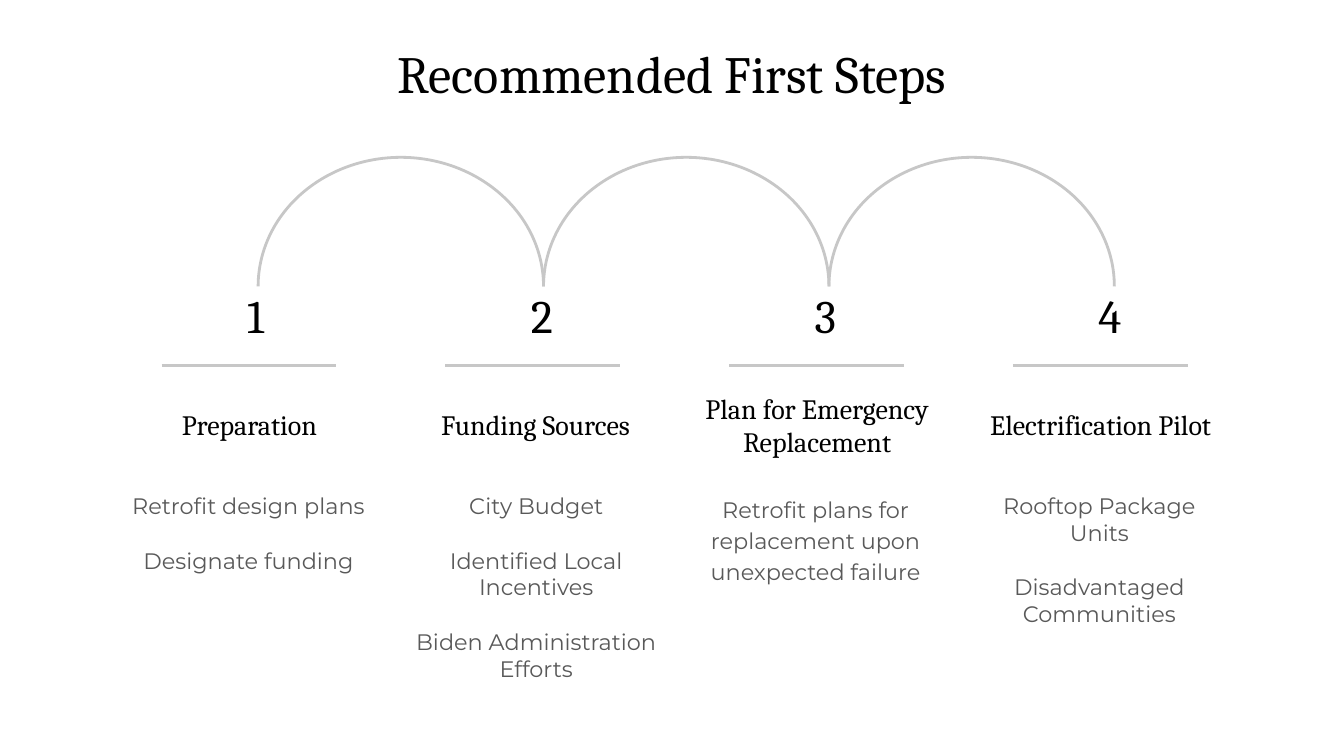
from dataclasses import dataclass

from lxml import etree
from pptx import Presentation
from pptx.dml.color import RGBColor
from pptx.enum import text
from pptx.oxml import ns
from pptx.util import Pt


@dataclass(frozen=True)
class Theme:
    ink: RGBColor = RGBColor(0, 0, 0)
    muted: RGBColor = RGBColor(0x59, 0x59, 0x59)
    rule: RGBColor = RGBColor(0xC7, 0xC7, 0xC7)
    serif: str = "Cambria"
    sans: str = "Montserrat"
    title: float = 28
    number: float = 25
    heading: float = 15
    body: float = 12
    stroke: float = 1.5
    inset: float = 7.2
    gap: float = 15


theme = Theme()


def write(box, lines, font, size, color, anchor=text.MSO_ANCHOR.TOP):
    """Fill a box with centred paragraphs in one style."""
    frame = box.text_frame
    frame.text = "\n".join(lines)
    frame.word_wrap = True
    frame.auto_size = text.MSO_AUTO_SIZE.NONE
    frame.vertical_anchor = anchor
    frame.margin_left = frame.margin_right = Pt(theme.inset)
    frame.margin_top = frame.margin_bottom = Pt(theme.inset)
    for index, paragraph in enumerate(frame.paragraphs):
        paragraph.alignment = text.PP_ALIGN.CENTER
        paragraph.space_before = Pt(theme.gap if index else 0)
        for run in paragraph.runs:
            run.font.name = font
            run.font.size = Pt(size)
            run.font.color.rgb = color


def add_text(left, top, width, height):
    return slide.shapes.add_textbox(Pt(left), Pt(top), Pt(width), Pt(height))


deck = Presentation()
deck.slide_width, deck.slide_height = Pt(720), Pt(405)
slide = deck.slides.add_slide(deck.slide_layouts[5])

# Title
title = slide.shapes.title
title.left, title.top, title.width, title.height = Pt(56.2), Pt(15.1), Pt(607.7), Pt(45.4)
write(title, ["Recommended First Steps"], theme.serif, theme.title, theme.ink)

# Half-ellipse arcs leading from each step to the next
arc_left, arc_top, arc_width, arc_height = 138.3, 84.3, 152.9, 69.1
for index in range(3):
    left = arc_left + index * arc_width
    base = arc_top + arc_height
    builder = slide.shapes.build_freeform(Pt(left), Pt(base))
    builder.add_line_segments(
        [(Pt(left + arc_width / 2), Pt(arc_top)), (Pt(left + arc_width), Pt(base))],
        close=False,
    )
    arc = builder.convert_to_shape()
    arc.shadow.inherit = False
    arc.fill.background()
    arc.line.color.rgb = theme.rule
    arc.line.width = Pt(theme.stroke)
    # Swap the straight segments for one true curve
    outline = arc._element.find(".//" + ns.qn("a:path"))
    for segment in outline.findall(ns.qn("a:lnTo")):
        outline.remove(segment)
    etree.SubElement(
        outline, ns.qn("a:arcTo"),
        wR=str(Pt(arc_width / 2)), hR=str(Pt(arc_height)),
        stAng="10800000", swAng="10800000",
    )

# Steps: heading, heading box (left, width, height), details left, details
steps = [
    ("Preparation", (81.4, 104.4, 30.2), 57.6,
     ["Retrofit design plans", "Designate funding"]),
    ("Funding Sources", (223.9, 126, 30.2), 211.7,
     ["City Budget", "Identified Local Incentives", "Biden Administration Efforts"]),
    ("Plan for Emergency Replacement", (365.8, 144, 33.8), 361.4,
     ["Retrofit plans for replacement upon unexpected failure"]),
    ("Electrification Pilot", (493.2, 193, 50.4), 513.4,
     ["Rooftop Package Units", "Disadvantaged Communities"]),
]
pitch = 152
heading_middle = 227.5
for index, (heading, (left, width, height), details_left, details) in enumerate(steps):
    # Number
    number = add_text(125.3 + index * pitch, 157.7, 16.6, 21.6)
    write(number, [str(index + 1)], theme.serif, theme.number, theme.ink,
          text.MSO_ANCHOR.MIDDLE)

    # Rule under the number
    rule_left = 86.6 + index * pitch
    rule = slide.shapes.add_connector(
        1, Pt(rule_left), Pt(195.8), Pt(rule_left + 93.6), Pt(195.8))
    rule.line.color.rgb = theme.rule
    rule.line.width = Pt(theme.stroke)
    etree.SubElement(rule._element.spPr, ns.qn("a:effectLst"))

    # Heading
    heading_box = add_text(left, heading_middle - height / 2, width, height)
    write(heading_box, [heading], theme.serif, theme.heading, theme.ink,
          text.MSO_ANCHOR.MIDDLE)

    # Details; a lone paragraph is set with looser lines
    details_box = add_text(details_left, 256.3, 151.2, 77.8)
    write(details_box, details, theme.sans, theme.body, theme.muted)
    if len(details) == 1:
        details_box.text_frame.paragraphs[0].line_spacing = 1.15

deck.save("out.pptx")
